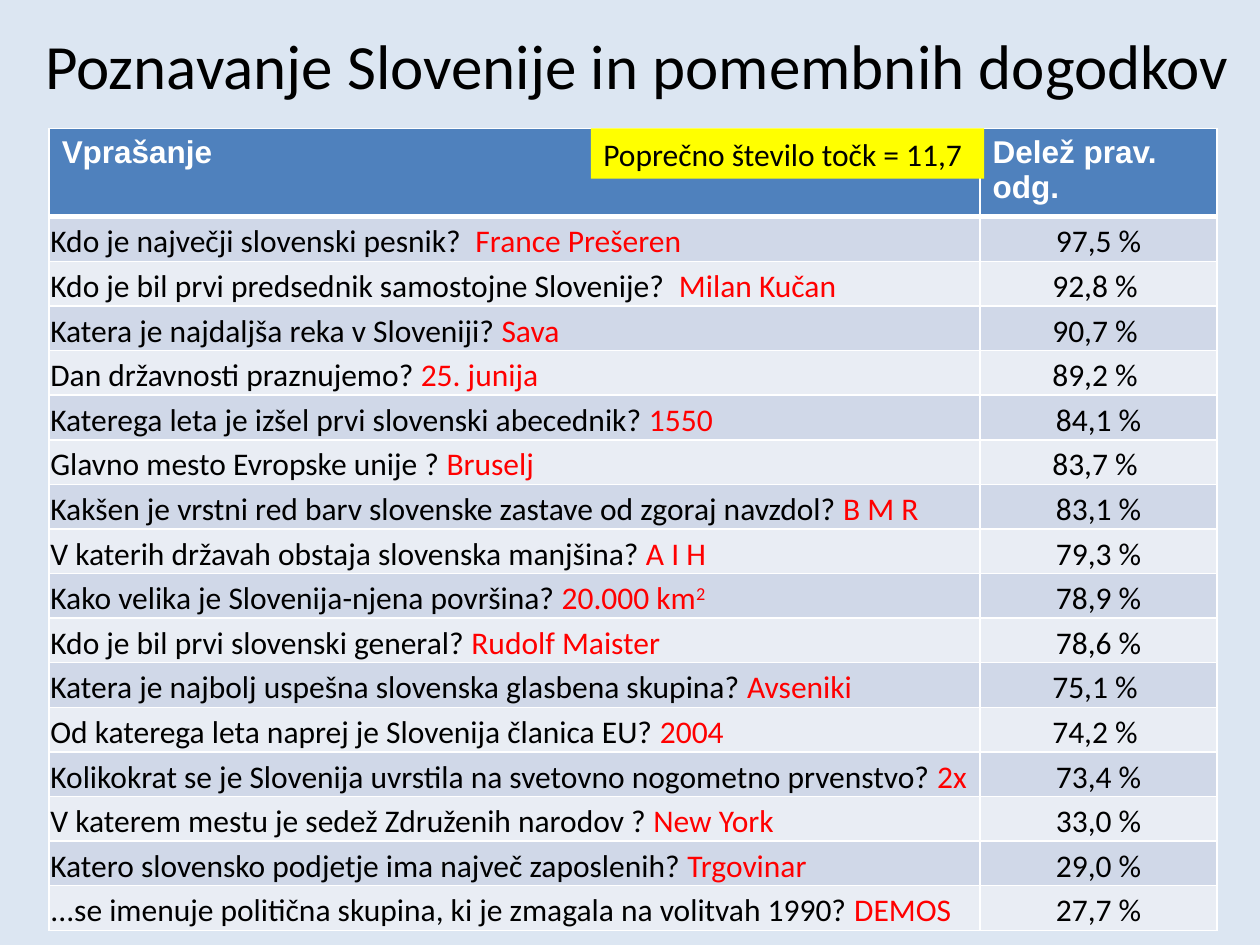
from dataclasses import dataclass

from lxml.etree import SubElement
from pptx import Presentation
from pptx.dml.color import RGBColor
from pptx.enum.shapes import MSO_SHAPE
from pptx.enum.text import MSO_ANCHOR, PP_ALIGN
from pptx.oxml.ns import qn
from pptx.util import Inches, Pt


@dataclass(frozen=True)
class Theme:
    background: str = "DCE6F2"
    header: str = "4F81BD"
    bands: tuple = ("D0D8E8", "E9EDF4")
    note: str = "FFFF00"
    white: str = "FFFFFF"
    ink: str = "000000"
    answer: str = "FF0000"
    body_font: str = "Calibri"
    header_font: str = "Arial"
    title_size: int = 36
    body_size: int = 18
    thin: int = 1
    thick: int = 3


@dataclass(frozen=True)
class Box:
    left: int
    top: int
    width: int
    height: int

    def share(self, x, y, w, h):
        """Box given as shares of this one."""
        return Box(self.left + int(self.width * x), self.top + int(self.height * y),
                   int(self.width * w), int(self.height * h))

    def place(self):
        return self.left, self.top, self.width, self.height


THEME = Theme()
TITLE = "Poznavanje Slovenije in pomembnih dogodkov "
AVERAGE = "Poprečno število točk = 11,7"
HEADINGS = ("Vprašanje", "Delež prav. odg.")
SUPERSCRIPTS = {"20.000 km": "2"}
QUIZ = [
    ("Kdo je največji slovenski pesnik?  ", "France Prešeren", "97,5 %"),
    ("Kdo je bil prvi predsednik samostojne Slovenije?  ", "Milan Kučan", "92,8 % "),
    ("Katera je najdaljša reka v Sloveniji? ", "Sava", "90,7 % "),
    ("Dan državnosti praznujemo? ", "25. junija", "89,2 % "),
    ("Katerega leta je izšel prvi slovenski abecednik? ", "1550", "84,1 %"),
    ("Glavno mesto Evropske unije ? ", "Bruselj", "83,7 % "),
    ("Kakšen je vrstni red barv slovenske zastave od zgoraj navzdol? ", "B M R", "83,1 %"),
    ("V katerih državah obstaja slovenska manjšina? ", "A I H", "79,3 %"),
    ("Kako velika je Slovenija-njena površina? ", "20.000 km", "78,9 %"),
    ("Kdo je bil prvi slovenski general? ", "Rudolf Maister", "78,6 %"),
    ("Katera je najbolj uspešna slovenska glasbena skupina? ", "Avseniki", "75,1 % "),
    ("Od katerega leta naprej je Slovenija članica EU? ", "2004", "74,2 % "),
    ("Kolikokrat se je Slovenija uvrstila na svetovno nogometno prvenstvo? ", "2x", "73,4 %"),
    ("V katerem mestu je sedež Združenih narodov ? ", "New York", "33,0 %"),
    ("Katero slovensko podjetje ima največ zaposlenih? ", "Trgovinar", "29,0 %"),
    ("...se imenuje politična skupina, ki je zmagala na volitvah 1990? ", "DEMOS", "27,7 %"),
]


def paint(fill, color):
    fill.solid()
    fill.fore_color.rgb = RGBColor.from_string(color)


def add_run(paragraph, text, color=THEME.ink, size=THEME.body_size,
            font=THEME.body_font, bold=False):
    run = paragraph.add_run()
    run.text = text
    run.font.name = font
    run.font.size = Pt(size)
    run.font.bold = bold
    run.font.color.rgb = RGBColor.from_string(color)
    return run


def set_borders(cell, top, bottom):
    properties = cell._tc.get_or_add_tcPr()
    sides = (("L", THEME.thin), ("R", THEME.thin), ("T", top), ("B", bottom))
    for position, (side, width) in enumerate(sides):
        line = SubElement(properties, qn(f"a:ln{side}"), w=str(Pt(width)))
        color = SubElement(SubElement(line, qn("a:solidFill")), qn("a:srgbClr"))
        color.set("val", THEME.white)
        properties.insert(position, line)  # borders come before the fill


def style_body_cell(cell, color, top):
    cell.vertical_anchor = MSO_ANCHOR.BOTTOM
    cell.margin_left = cell.margin_right = cell.margin_top = Inches(0.01)
    cell.margin_bottom = 0
    paint(cell.fill, color)
    set_borders(cell, top, THEME.thin)


def add_title(slide, box):
    frame = slide.shapes.add_textbox(*box.place()).text_frame
    frame.word_wrap = True
    frame.vertical_anchor = MSO_ANCHOR.MIDDLE
    paragraph = frame.paragraphs[0]
    paragraph.alignment = PP_ALIGN.CENTER
    add_run(paragraph, TITLE, size=THEME.title_size)


def add_quiz_table(slide, box):
    table = slide.shapes.add_table(len(QUIZ) + 1, len(HEADINGS), *box.place()).table
    question_width = int(box.width * 0.797)
    table.columns[0].width = question_width
    table.columns[1].width = box.width - question_width

    # Header row
    for cell, heading in zip(table.rows[0].cells, HEADINGS):
        paint(cell.fill, THEME.header)
        set_borders(cell, THEME.thin, THEME.thick)
        add_run(cell.text_frame.paragraphs[0], heading, THEME.white,
                font=THEME.header_font, bold=True)

    # Questions with answers and shares
    for number, (question, answer, share) in enumerate(QUIZ, 1):
        question_cell, share_cell = table.rows[number].cells
        top = THEME.thick if number == 1 else THEME.thin
        for cell in (question_cell, share_cell):
            style_body_cell(cell, THEME.bands[(number - 1) % 2], top)
        paragraph = question_cell.text_frame.paragraphs[0]
        add_run(paragraph, question)
        add_run(paragraph, answer, THEME.answer)
        if answer in SUPERSCRIPTS:
            power = add_run(paragraph, SUPERSCRIPTS[answer], THEME.answer)
            power._r.get_or_add_rPr().set("baseline", "30000")
        paragraph = share_cell.text_frame.paragraphs[0]
        paragraph.alignment = PP_ALIGN.CENTER
        add_run(paragraph, share)


def add_average_note(slide, box):
    note = slide.shapes.add_shape(MSO_SHAPE.RECTANGLE, *box.place())
    note.shadow.inherit = False
    paint(note.fill, THEME.note)
    note.line.fill.background()
    frame = note.text_frame
    frame.word_wrap = True
    frame.vertical_anchor = MSO_ANCHOR.TOP
    paragraph = frame.paragraphs[0]
    paragraph.alignment = PP_ALIGN.LEFT
    add_run(paragraph, AVERAGE)


def main():
    deck = Presentation()
    deck.slide_width, deck.slide_height = Inches(10), Inches(7.5)
    slide = deck.slides.add_slide(deck.slide_layouts[6])
    paint(slide.background.fill, THEME.background)
    page = Box(0, 0, deck.slide_width, deck.slide_height)

    add_title(slide, page.share(0.023, 0, 0.977, 0.136))
    add_quiz_table(slide, page.share(0.039, 0.136, 0.927, 0.803))
    add_average_note(slide, page.share(0.469, 0.136, 0.312, 0.053))
    deck.save("out.pptx")


if __name__ == "__main__":
    main()
